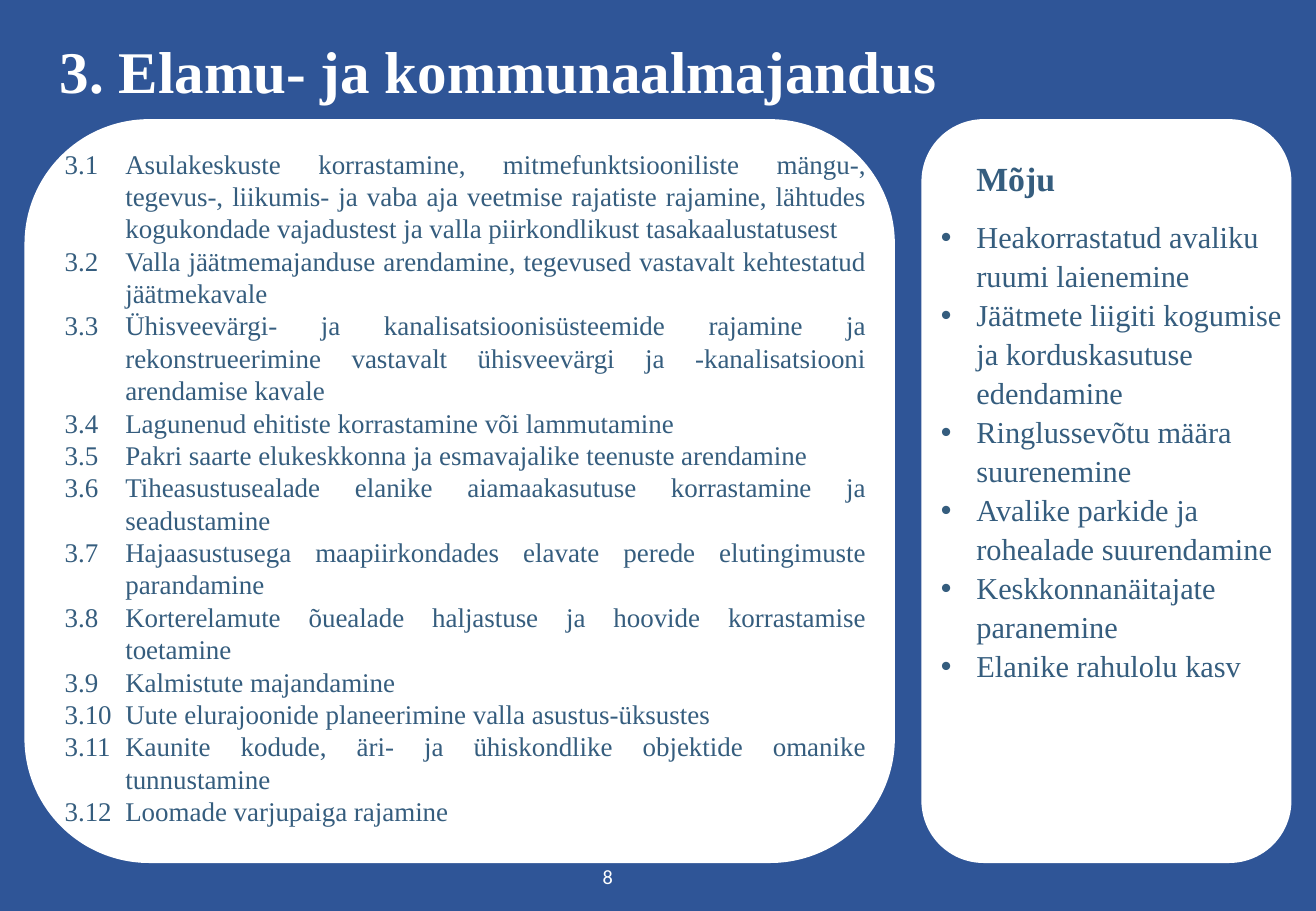
from dataclasses import dataclass

from lxml import etree
from pptx import Presentation
from pptx.dml.color import RGBColor
from pptx.enum.shapes import MSO_SHAPE
from pptx.enum.text import MSO_ANCHOR, MSO_AUTO_SIZE, PP_ALIGN
from pptx.oxml.ns import qn
from pptx.util import Cm, Pt

ROUNDED = MSO_SHAPE.ROUNDED_RECTANGLE
MIDDLE = MSO_ANCHOR.MIDDLE
NO_AUTOFIT = MSO_AUTO_SIZE.NONE
LEFT, CENTER, JUSTIFY = PP_ALIGN.LEFT, PP_ALIGN.CENTER, PP_ALIGN.JUSTIFY

HEADING = "3. Elamu- ja kommunaalmajandus"
SECTION = 3
ACTIONS = [
    "Asulakeskuste korrastamine, mitmefunktsiooniliste mängu-, tegevus-, liikumis- ja vaba aja "
    "veetmise rajatiste rajamine, lähtudes kogukondade vajadustest ja valla piirkondlikust "
    "tasakaalustatusest",
    "Valla jäätmemajanduse arendamine, tegevused vastavalt kehtestatud jäätmekavale",
    "Ühisveevärgi- ja kanalisatsioonisüsteemide rajamine ja rekonstrueerimine vastavalt "
    "ühisveevärgi ja -kanalisatsiooni arendamise kavale",
    "Lagunenud ehitiste korrastamine või lammutamine",
    "Pakri saarte elukeskkonna ja esmavajalike teenuste arendamine",
    "Tiheasustusealade elanike aiamaakasutuse korrastamine ja seadustamine",
    "Hajaasustusega maapiirkondades elavate perede elutingimuste parandamine",
    "Korterelamute õuealade haljastuse ja hoovide korrastamise toetamine",
    "Kalmistute majandamine",
    "Uute elurajoonide planeerimine valla asustus-üksustes",
    "Kaunite kodude, äri- ja ühiskondlike objektide omanike tunnustamine",
    "Loomade varjupaiga rajamine",
]
IMPACT_HEADING = "Mõju"
IMPACTS = [
    "Heakorrastatud avaliku ruumi laienemine",
    "Jäätmete liigiti kogumise ja korduskasutuse edendamine",
    "Ringlussevõtu määra suurenemine",
    "Avalike parkide ja rohealade suurendamine",
    "Keskkonnanäitajate paranemine",
    "Elanike rahulolu kasv",
]
PAGE_NUMBER = "8"


@dataclass(frozen=True)
class Theme:
    background: RGBColor = RGBColor(0x2F, 0x55, 0x97)
    card: RGBColor = RGBColor(0xFF, 0xFF, 0xFF)
    light_text: RGBColor = RGBColor(0xFF, 0xFF, 0xFF)
    body_text: RGBColor = RGBColor(0x35, 0x5D, 0x7E)
    serif: str = "Times New Roman"
    sans: str = "Calibri"
    heading: Pt = Pt(35)
    action: Pt = Pt(16)
    impact_heading: Pt = Pt(20)
    impact: Pt = Pt(18)
    page_number: Pt = Pt(12)


THEME = Theme()
SLIDE_SIZE = Cm(27.51), Cm(19.05)
CARD_TOP, CARD_HEIGHT = Cm(2.51), Cm(15.52)
CARD_SPANS = [(Cm(0.53), Cm(18.16)), (Cm(19.28), Cm(7.7))]
HEADING_BOX = Cm(1.12), Cm(0.74), Cm(25.25), Cm(1.65)
ACTIONS_BOX = Cm(0.99), Cm(2.87), Cm(17.25), Cm(14.63)
IMPACTS_BOX = Cm(19.28), Cm(3.12), Cm(7.7), Cm(11.33)
PAGE_BOX = Cm(12.45), Cm(17.96), Cm(0.51), Cm(0.74)
INSET = Cm(0.13)


def place(holder, box):
    holder.left, holder.top, holder.width, holder.height = box
    frame = holder.text_frame
    frame.auto_size = NO_AUTOFIT
    frame.vertical_anchor = MIDDLE
    frame.margin_left = frame.margin_right = INSET
    frame.margin_top = frame.margin_bottom = INSET
    return frame


def format_paragraph(paragraph, font, size, color, align=LEFT, bold=False, leading=None):
    paragraph.font.name = font
    paragraph.font.size = size
    paragraph.font.color.rgb = color
    paragraph.font.bold = bold
    paragraph.alignment = align
    paragraph.space_before = Pt(0)
    if leading:
        paragraph.line_spacing = leading


def indent(paragraph, margin, first_line, bullet=True):
    properties = paragraph._p.get_or_add_pPr()
    properties.set("marL", str(margin))
    properties.set("indent", str(first_line))
    if not bullet:
        etree.SubElement(properties, qn("a:buNone"))


def main():
    deck = Presentation()
    deck.slide_width, deck.slide_height = SLIDE_SIZE
    slide = deck.slides.add_slide(deck.slide_layouts[3])
    slide.background.fill.solid()
    slide.background.fill.fore_color.rgb = THEME.background
    heading, actions, impacts = slide.placeholders

    for left, width in CARD_SPANS:
        card = slide.shapes.add_shape(ROUNDED, left, CARD_TOP, width, CARD_HEIGHT)
        card.adjustments[0] = 0.167
        card.shadow.inherit = False
        card.fill.solid()
        card.fill.fore_color.rgb = THEME.card
        card.line.color.rgb = THEME.card
        card.line.width = Pt(1)
        heading.element.addprevious(card.element)

    frame = place(heading, HEADING_BOX)
    frame.text = HEADING
    format_paragraph(frame.paragraphs[0], THEME.serif, THEME.heading, THEME.light_text,
                     bold=True, leading=0.9)

    frame = place(actions, ACTIONS_BOX)
    frame.text = "\n".join(f"{SECTION}.{n}\t{action}" for n, action in enumerate(ACTIONS, 1))
    for paragraph in frame.paragraphs:
        format_paragraph(paragraph, THEME.serif, THEME.action, THEME.body_text,
                         align=JUSTIFY, leading=Pt(19.2))
        indent(paragraph, Cm(1.5), Cm(-1.27), bullet=False)

    frame = place(impacts, IMPACTS_BOX)
    frame.text = "\n".join([IMPACT_HEADING, *IMPACTS])
    impact_heading, *impact_lines = frame.paragraphs
    format_paragraph(impact_heading, THEME.serif, THEME.impact_heading, THEME.body_text,
                     bold=True, leading=Pt(25))
    impact_heading.space_after = Pt(10.3)
    indent(impact_heading, Cm(1), 0, bullet=False)
    for paragraph in impact_lines:
        format_paragraph(paragraph, THEME.serif, THEME.impact, THEME.body_text,
                         leading=Pt(23.1))
        indent(paragraph, Cm(1), Cm(-0.74))

    frame = place(slide.shapes.add_textbox(*PAGE_BOX), PAGE_BOX)
    frame.word_wrap = False
    frame.text = PAGE_NUMBER
    format_paragraph(frame.paragraphs[0], THEME.sans, THEME.page_number, THEME.light_text,
                     align=CENTER)

    deck.save("out.pptx")


if __name__ == "__main__":
    main()
